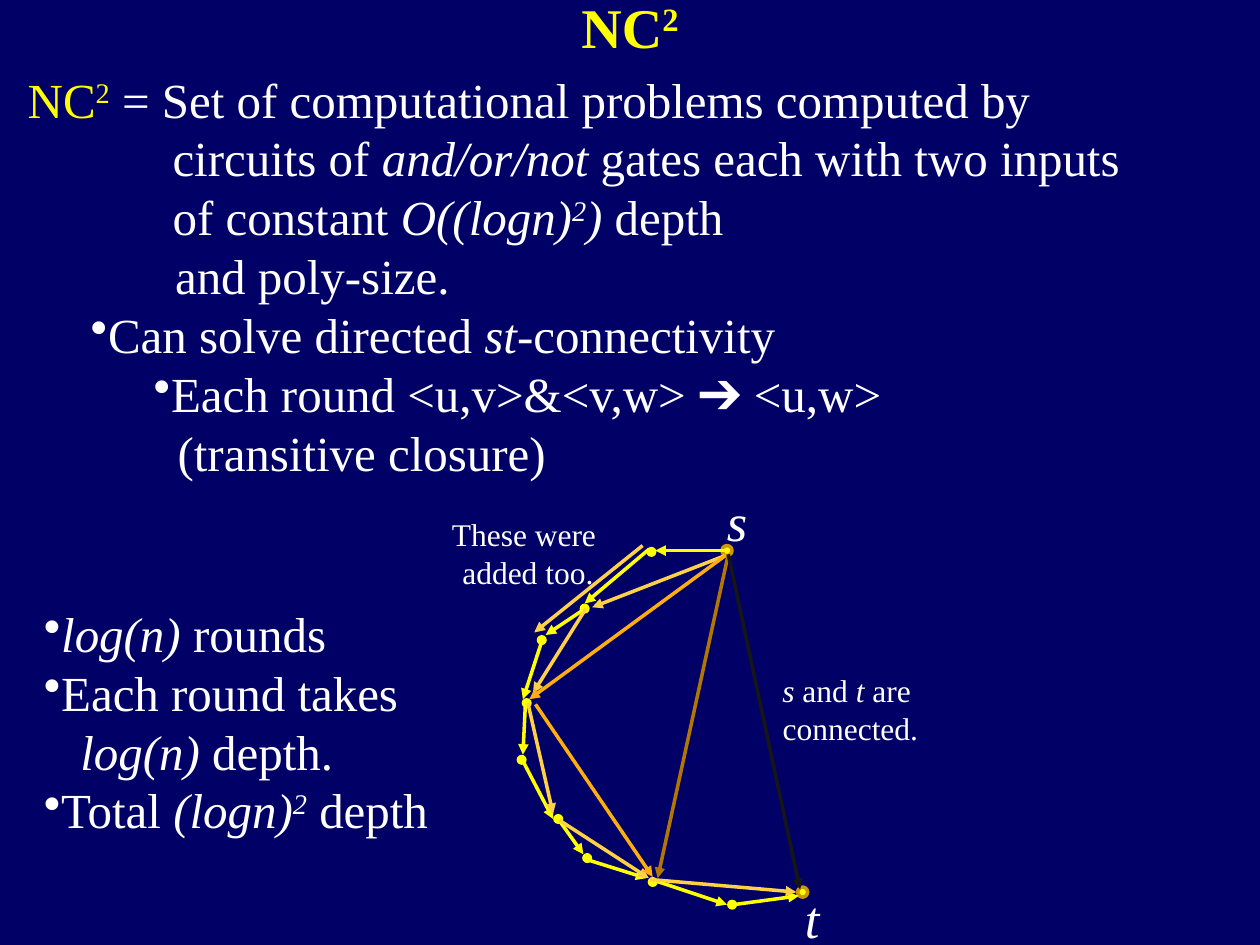
"""Build the NC² slide: class definition, st-connectivity bullets and path-doubling graph."""
from typing import NamedTuple

from lxml import etree
from pptx import Presentation
from pptx import util as u
from pptx.dml.color import RGBColor
from pptx.enum import shapes, text
from pptx.oxml.ns import qn

COLORS = {
    "background": "000066",
    "text": "FFFFFF",
    "path": "FFFF00",
    "ring": "CC9900",
    "round1": "FFD147",
    "round2": "FFAE0D",
    "round3": "B27700",
    "round4": "161616",
}
FONT = "Times New Roman"
DOT = 0.08


class Run(NamedTuple):
    text: str
    italic: bool = False
    sup: bool = False
    color: str = "text"


class Para(NamedTuple):
    runs: list[Run]
    left: float = 0
    first: float = 0
    bullet: bool = False


class Dot(NamedTuple):
    x: float
    y: float
    ring: bool = False


class Edge(NamedTuple):
    x1: float
    y1: float
    x2: float
    y2: float
    color: str = "path"


BREAK = Run("\n")
SQUARED = [Run("(logn)", True), Run("2", True, True)]

DEFINITION = [
    Para([Run("NC", color="path"), Run("2", sup=True, color="path"),
          Run(" = Set of computational problems computed by"), BREAK,
          Run("circuits of "), Run("and/or/not", True),
          Run(" gates each with two inputs "), BREAK,
          Run("of constant "), Run("O(", True), *SQUARED, Run(")", True),
          Run(" depth")], 1.15, -1.15),
    Para([Run("and poly-size.")], 1.17),
    Para([Run("Can solve directed "), Run("st", True), Run("-connectivity")],
         0.5, bullet=True),
    Para([Run("Each round <u,v>&<v,w> ➔ <u,w>")], 1, bullet=True),
    Para([Run("(transitive closure)")], 1.19),
]
DEPTH = [
    Para([Run("log(n) ", True), Run("rounds")], 1, bullet=True),
    Para([Run("Each round takes")], 1, bullet=True),
    Para([Run("log(n)", True), Run(" depth.")], 1.29),
    Para([Run("Total "), *SQUARED, Run(" depth")], 1, bullet=True),
]
TITLE = [Para([Run("NC", color="path"), Run("2", sup=True, color="path")])]
ADDED = [Para([Run("These were "), BREAK, Run("added too.")])]
CONNECTED = [Para([Run("s", True), Run(" and "), Run("t", True), Run(" are "),
                   BREAK, Run("connected.")])]

DOTS = [
    Dot(5.77, 4.37, True), Dot(5.17, 4.38), Dot(4.64, 4.83), Dot(4.3, 5.08),
    Dot(4.18, 5.58), Dot(4.14, 6.03), Dot(4.43, 6.5), Dot(4.66, 6.81),
    Dot(5.18, 7), Dot(5.81, 7.18), Dot(6.37, 7.08, True),
]
EDGES = [
    Edge(5.77, 4.37, 5.2, 4.37), Edge(5.15, 4.36, 4.64, 4.79),
    Edge(4.63, 4.84, 4.33, 5.04), Edge(4.3, 5.09, 4.15, 5.55),
    Edge(4.17, 5.59, 4.15, 5.99), Edge(4.15, 6.04, 4.39, 6.5),
    Edge(4.43, 6.5, 4.63, 6.78), Edge(4.65, 6.82, 5.13, 6.97),
    Edge(5.2, 6.99, 5.77, 7.18), Edge(5.82, 7.18, 6.34, 7.11),
    Edge(5.78, 4.4, 4.7, 4.82, "round1"), Edge(4.65, 4.83, 4.23, 5.5, "round1"),
    Edge(4.44, 6.51, 5.15, 6.97, "round1"), Edge(4.19, 5.58, 4.39, 6.46, "round1"),
    Edge(5.16, 6.98, 6.32, 7.08, "round1"), Edge(5.1, 4.33, 4.24, 5.02, "round1"),
    Edge(5.77, 4.4, 4.2, 5.55, "round2"), Edge(4.25, 5.59, 5.18, 6.96, "round2"),
    Edge(5.78, 4.4, 5.22, 6.97, "round3"), Edge(5.78, 4.4, 6.35, 7.06, "round4"),
]


def rgb(name: str) -> RGBColor:
    """Look up a named colour."""
    return RGBColor.from_string(COLORS[name])


def add_text(s, box: tuple[float, ...], paras: list[Para], *, size: float = 28,
             bold: bool = False, center: bool = False, middle: bool = False,
             wrap: bool = True, inset: float = 0.1) -> None:
    """Add a text box holding formatted paragraphs."""
    tf = s.shapes.add_textbox(*map(u.Inches, box)).text_frame
    tf.word_wrap = wrap
    tf.margin_left = tf.margin_right = u.Inches(inset)
    if middle:
        tf.vertical_anchor = text.MSO_ANCHOR.MIDDLE
    for i, para in enumerate(paras):
        p = tf.add_paragraph() if i else tf.paragraphs[0]
        p.alignment = text.PP_ALIGN.CENTER if center else text.PP_ALIGN.LEFT
        pPr = p._p.get_or_add_pPr()
        pPr.set("marL", str(u.Inches(para.left)))
        pPr.set("indent", str(u.Inches(para.first)))
        if para.bullet:
            etree.SubElement(pPr, qn("a:buChar"), char="•")
        for run in para.runs:
            if run == BREAK:
                p.add_line_break()
                continue
            r = p.add_run()
            r.text = run.text
            r.font.name, r.font.size = FONT, u.Pt(size)
            r.font.bold, r.font.italic = bold, run.italic
            r.font.color.rgb = rgb(run.color)
            if run.sup:
                r.font._element.set("baseline", "30000")


def add_dot(s, dot: Dot) -> None:
    """Add a graph node centred on its point."""
    sp = s.shapes.add_shape(shapes.MSO_SHAPE.OVAL, u.Inches(dot.x - DOT / 2),
                            u.Inches(dot.y - DOT / 2), u.Inches(DOT), u.Inches(DOT))
    sp.shadow.inherit = False
    sp.fill.solid()
    sp.fill.fore_color.rgb = rgb("path")
    if dot.ring:
        sp.line.color.rgb = rgb("ring")
        sp.line.width = u.Pt(2)
    else:
        sp.line.fill.background()


def add_edge(s, edge: Edge) -> None:
    """Add a directed graph edge."""
    ends = map(u.Inches, edge[:4])
    c = s.shapes.add_connector(shapes.MSO_CONNECTOR.STRAIGHT, *ends)
    c.line.color.rgb = rgb(edge.color)
    c.line.width = u.Pt(2)
    etree.SubElement(c.line._get_or_add_ln(), qn("a:tailEnd"), type="triangle")
    etree.SubElement(c._element.spPr, qn("a:effectLst"))


def main() -> None:
    """Draw the slide and save it."""
    prs = Presentation()
    prs.slide_width, prs.slide_height = u.Inches(10), u.Inches(7.5)
    s = prs.slides.add_slide(prs.slide_layouts[6])
    s.background.fill.solid()
    s.background.fill.fore_color.rgb = rgb("background")

    add_text(s, (-0.08, 0.5, 9.46, 3.4), DEFINITION, inset=0.3)
    add_text(s, (0.75, -0.42, 8.5, 1.25), TITLE, size=32, bold=True,
             center=True, middle=True)
    add_text(s, (5.67, 3.83, 0.36, 0.6), [Para([Run("s", True)])], size=30, wrap=False)
    add_text(s, (6.29, 6.98, 0.32, 0.61), [Para([Run("t", True)])], size=30, wrap=False)
    for dot in DOTS:
        add_dot(s, dot)
    for edge in EDGES:
        add_edge(s, edge)
    add_text(s, (3.48, 4.04, 1.42, 0.71), ADDED, size=18, center=True, wrap=False)
    add_text(s, (5.76, 5.28, 1.98, 0.71), CONNECTED, size=18, center=True)
    add_text(s, (-0.75, 4.74, 5, 1.98), DEPTH)
    prs.save("out.pptx")


if __name__ == "__main__":
    main()
